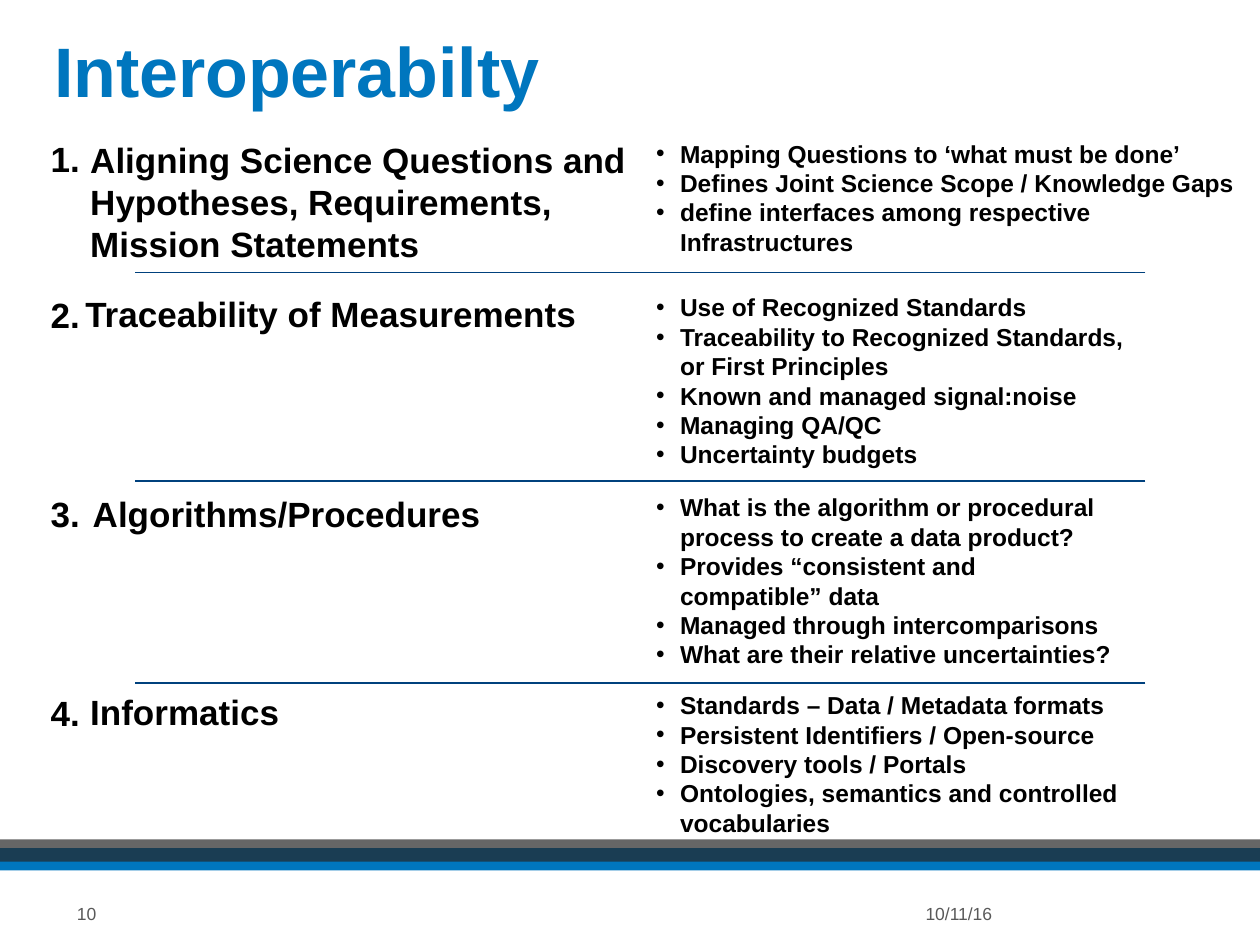
from dataclasses import dataclass

from lxml.etree import SubElement
from pptx import Presentation
from pptx.dml.color import RGBColor
from pptx.enum.shapes import MSO_CONNECTOR, MSO_SHAPE
from pptx.enum.text import MSO_ANCHOR, PP_ALIGN
from pptx.oxml.ns import qn
from pptx.util import Cm, Pt


@dataclass(frozen=True)
class Theme:
    font: str = "Arial"
    blue: str = "0076BE"
    navy: str = "00417D"
    band: str = "262626"
    text: str = "000000"
    muted: str = "595959"
    title_size: float = 40
    heading_size: float = 20
    bullet_size: float = 14
    footer_size: float = 10


@dataclass(frozen=True)
class Topic:
    top: float
    height: float
    bullet_width: float
    heading_left: float
    heading_width: float
    number_shift: float
    heading: str
    bullets: tuple


THEME = Theme()
LEFT = 0.77
BULLET_LEFT = 12.98
BULLET_INDENT = 0.48
DIVIDERS = (5.49, 9.7, 13.77)

TOPICS = (
    Topic(2.67, 2.64, 12.17, 0.8, 11.56, -0.03,
          "Aligning Science Questions and Hypotheses, Requirements, Mission Statements",
          ("Mapping Questions to ‘what must be done’",
           "Defines Joint Science Scope / Knowledge Gaps",
           "define interfaces among respective Infrastructures")),
    Topic(5.77, 3.84, 9.93, 0.7, 10.95, 0.03,
          "Traceability of Measurements",
          ("Use of Recognized Standards",
           "Traceability to Recognized Standards, or First Principles",
           "Known and managed signal:noise",
           "Managing QA/QC",
           "Uncertainty budgets")),
    Topic(9.8, 3.84, 9.68, 0.85, 9.3, 0,
          "Algorithms/Procedures",
          ("What is the algorithm or procedural process to create a data product?",
           "Provides “consistent and compatible” data",
           "Managed through intercomparisons",
           "What are their relative uncertainties?")),
    Topic(13.79, 3.25, 12.17, 0.8, 9.3, 0.03,
          "Informatics",
          ("Standards – Data / Metadata formats",
           "Persistent Identifiers / Open-source",
           "Discovery tools / Portals",
           "Ontologies, semantics and controlled vocabularies")),
)


def add_bullet(p):
    """Give a paragraph a hanging bullet."""
    pPr = p._p.get_or_add_pPr()
    pPr.set("marL", str(Cm(BULLET_INDENT)))
    pPr.set("indent", str(-Cm(BULLET_INDENT)))
    SubElement(pPr, qn("a:buFont"), typeface=THEME.font)
    SubElement(pPr, qn("a:buChar"), char="•")


def add_text(s, box, lines, size, color=THEME.text, bold=True, bullets=False,
             wrap=True, align=PP_ALIGN.LEFT, anchor=MSO_ANCHOR.TOP):
    tf = s.shapes.add_textbox(*map(Cm, box)).text_frame
    tf.word_wrap = wrap
    tf.vertical_anchor = anchor
    font_format = {"name": THEME.font, "size": Pt(size), "bold": bold}
    for i, line in enumerate(lines):
        p = tf.add_paragraph() if i else tf.paragraphs[0]
        p.alignment = align
        if bullets:
            add_bullet(p)
        r = p.add_run()
        r.text = line
        for name, value in font_format.items():
            setattr(r.font, name, value)
        r.font.color.rgb = RGBColor.from_string(color)


def add_footer_band(s, box):
    """Stack a translucent dark stripe over a blue one."""
    left, top, width, height = box
    for y, color, alpha in ((top + 0.18, THEME.blue, 100), (top, THEME.band, 70)):
        sp = s.shapes.add_shape(MSO_SHAPE.RECTANGLE, *map(Cm, (left, y, width, height)))
        sp.shadow.inherit = False
        sp.fill.solid()
        sp.fill.fore_color.rgb = RGBColor.from_string(color)
        sp.line.fill.background()
        if alpha < 100:
            clr = sp._element.spPr.find(".//" + qn("a:srgbClr"))
            SubElement(clr, qn("a:alpha"), val=str(alpha * 1000))


def add_footer_text(s, top):
    for left, width, text in ((14.33, 5.92, "10/11/16"), (0.64, 1.55, "10")):
        add_text(s, (left, top, width, 0.58), [text], THEME.footer_size, THEME.muted,
                 bold=False, align=PP_ALIGN.RIGHT, anchor=MSO_ANCHOR.MIDDLE)


def add_topic(s, left, number, topic):
    """Place number, heading and bullets in one row."""
    add_text(s, (left + topic.heading_left, topic.top, topic.heading_width, 1.11),
             [topic.heading], THEME.heading_size)
    add_text(s, (BULLET_LEFT, topic.top, topic.bullet_width, topic.height),
             topic.bullets, THEME.bullet_size, bullets=True)
    add_text(s, (left, topic.top + topic.number_shift, 1.4, 1.11),
             [f"{number}."], THEME.heading_size)


def add_divider(s, y):
    line = s.shapes.add_connector(MSO_CONNECTOR.STRAIGHT, Cm(23.09), Cm(y), Cm(2.72), Cm(y))
    line.line.color.rgb = RGBColor.from_string(THEME.navy)
    line.line.width = Pt(0.75)
    SubElement(line._element.spPr, qn("a:effectLst"))


def main():
    prs = Presentation()
    prs.slide_width, prs.slide_height = Cm(25.4), Cm(19.05)
    s = prs.slides.add_slide(prs.slide_layouts[6])
    add_footer_band(s, (0, 16.92, 25.4, 0.45))
    add_text(s, (0.84, 0.43, 10.82, 1.96), ["Interoperabilty"],
             THEME.title_size, THEME.blue, wrap=False)
    add_footer_text(s, 18.12)
    for number, topic in enumerate(TOPICS, 1):
        add_topic(s, LEFT, number, topic)
    for y in DIVIDERS:
        add_divider(s, y)
    prs.save("out.pptx")


if __name__ == "__main__":
    main()
